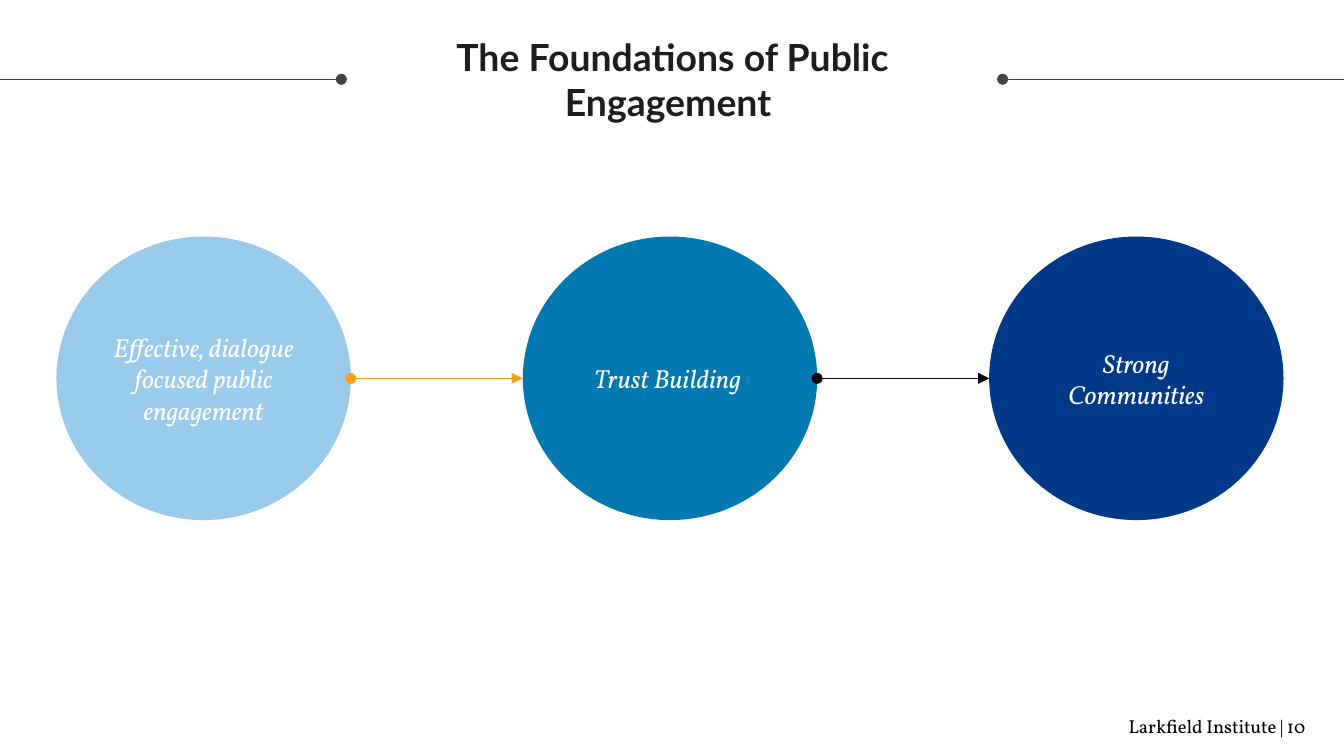
from lxml.etree import SubElement
from pptx import Presentation
from pptx.dml.color import RGBColor
from pptx.enum.shapes import MSO_CONNECTOR, MSO_SHAPE
from pptx.enum.text import MSO_ANCHOR, PP_ALIGN
from pptx.oxml.ns import qn
from pptx.util import Inches, Pt

COLORS = {
    "white": "FFFFFF", "black": "000000", "title": "1D1D1B", "rule": "434343",
    "light blue": "98CAEC", "blue": "0078B0", "navy": "003988", "orange": "FF9F19",
}


def color(name):
    return RGBColor.from_string(COLORS[name])


def write_text(shape, text, *, size, font="Vollkorn", ink="black",
               bold=False, italic=False):
    frame = shape.text_frame
    frame.word_wrap = True
    frame.vertical_anchor = MSO_ANCHOR.MIDDLE
    frame.margin_left = frame.margin_right = Inches(0.1)
    frame.margin_top = frame.margin_bottom = Inches(0.1)
    paragraph = frame.paragraphs[0]
    paragraph.alignment = PP_ALIGN.CENTER
    run = paragraph.add_run()
    run.text = text
    run.font.name = font
    run.font.size = Pt(size)
    run.font.bold = bold
    run.font.italic = italic
    run.font.color.rgb = color(ink)


class SlideBuilder:
    def __init__(self, slide, line_width=0.75, circle_text_size=14):
        self.slide = slide
        self.line_width = line_width
        self.circle_text_size = circle_text_size

    def text_box(self, left, top, width, height, text, **style):
        box = self.slide.shapes.add_textbox(
            Inches(left), Inches(top), Inches(width), Inches(height))
        write_text(box, text, **style)

    def circle(self, left, top, width, height, text, fill):
        shape = self.slide.shapes.add_shape(
            MSO_SHAPE.OVAL, Inches(left), Inches(top), Inches(width), Inches(height))
        shape.shadow.inherit = False
        shape.fill.solid()
        shape.fill.fore_color.rgb = color(fill)
        shape.line.fill.background()
        write_text(shape, text, size=self.circle_text_size, ink="white", italic=True)

    def line(self, start, end, y, ink, arrow=False):
        connector = self.slide.shapes.add_connector(
            MSO_CONNECTOR.STRAIGHT, Inches(start), Inches(y), Inches(end), Inches(y))
        connector.line.color.rgb = color(ink)
        connector.line.width = Pt(self.line_width)
        properties = connector.line._get_or_add_ln()
        SubElement(properties, qn("a:headEnd"), type="oval")
        if arrow:
            SubElement(properties, qn("a:tailEnd"), type="triangle")
        SubElement(connector._element.spPr, qn("a:effectLst"))


def main():
    # Widescreen 16:9 slide
    presentation = Presentation()
    presentation.slide_width = Inches(10)
    presentation.slide_height = Inches(10) * 9 // 16
    builder = SlideBuilder(presentation.slides.add_slide(presentation.slide_layouts[6]))

    # Title between two rules
    builder.line(2.54, -0.03, 0.59, "rule")
    builder.line(7.46, 10.01, 0.59, "rule")
    builder.text_box(2.54, 0.12, 4.93, 0.94, "The Foundations of Public Engagement ",
                     size=20, font="Lato", ink="title", bold=True)

    # Chain of circles at an even pitch
    first_left, top, width, height, pitch = 0.42, 1.76, 2.19, 2.11, 3.47
    steps = [
        ("Effective, dialogue focused public engagement", "light blue"),
        ("Trust Building ", "blue"),
        ("Strong Communities", "navy"),
    ]
    for index, (text, fill) in enumerate(steps):
        builder.circle(first_left + index * pitch, top, width, height, text, fill)

    # Arrows across the gaps
    for index, ink in enumerate(["orange", "black"]):
        left = first_left + index * pitch
        builder.line(left + width, left + pitch, top + height / 2, ink, arrow=True)

    # Footer
    builder.text_box(8.07, 5.19, 1.97, 0.43, "Larkfield Institute | 10", size=10)

    presentation.save("out.pptx")


if __name__ == "__main__":
    main()
